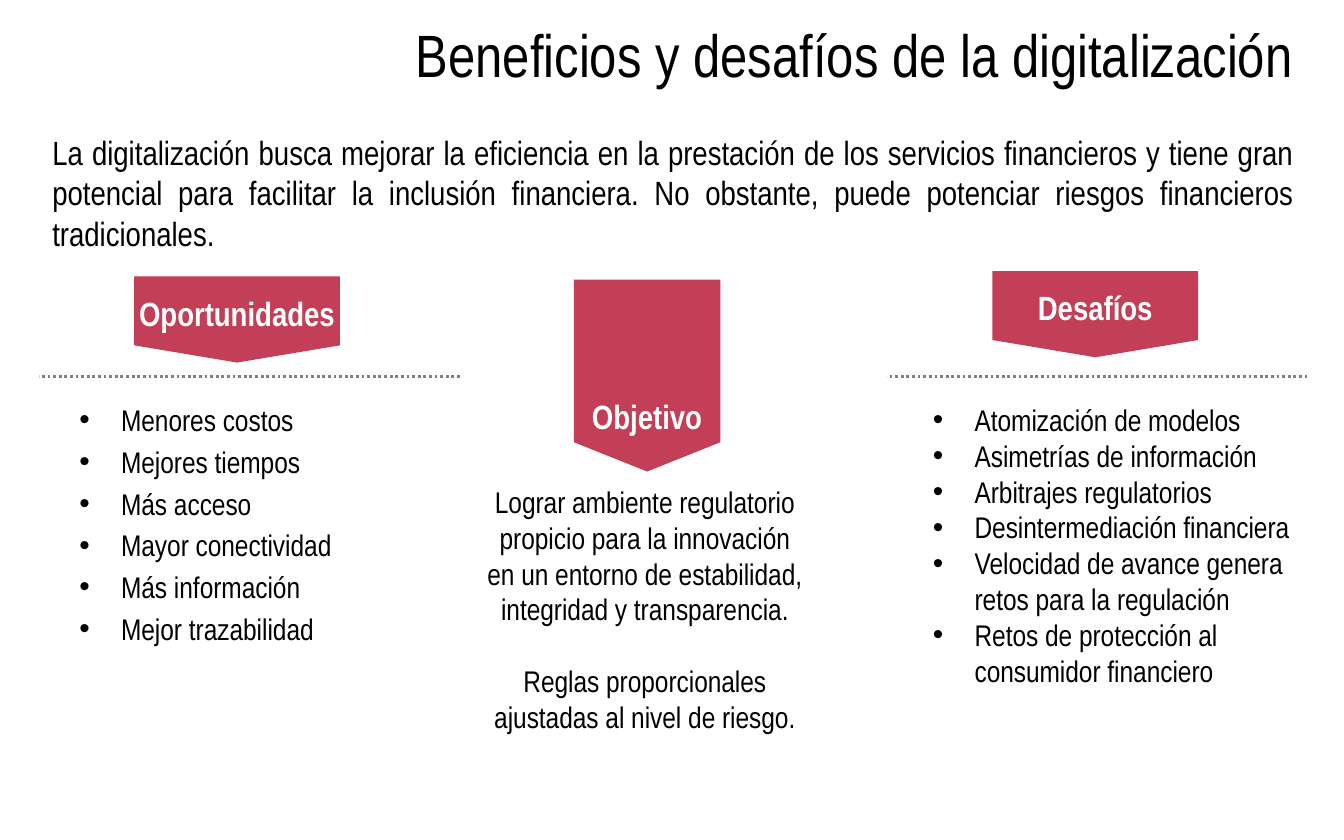
from lxml.etree import SubElement
from pptx import Presentation
from pptx.dml.color import RGBColor
from pptx.enum.dml import MSO_LINE
from pptx.enum.shapes import MSO_CONNECTOR, MSO_SHAPE
from pptx.enum.text import MSO_ANCHOR, PP_ALIGN
from pptx.oxml.ns import qn
from pptx.util import Cm, Pt

BLACK = RGBColor(0x00, 0x00, 0x00)
WHITE = RGBColor(0xFF, 0xFF, 0xFF)
CRIMSON = RGBColor(0xC3, 0x3E, 0x57)
GRAY = RGBColor(0x80, 0x80, 0x80)

FONT = "Arial Narrow"
BULLET_INDENT = Cm(0.79)
LABEL_HEIGHT = 1.02
RULE_TOP = 7.12
RULE_LENGTH = 7.95

TITLE = {"size": Pt(32)}
INTRO = {"size": Pt(18)}
BODY = {"size": Pt(16)}
LABEL = {"size": Pt(18), "bold": True}

OPPORTUNITIES = [
    "Menores costos",
    "Mejores tiempos",
    "Más acceso",
    "Mayor conectividad",
    "Más información",
    "Mejor trazabilidad",
]
CHALLENGES = [
    "Atomización de modelos",
    "Asimetrías de información",
    "Arbitrajes regulatorios",
    "Desintermediación financiera",
    "Velocidad de avance genera retos para la regulación",
    "Retos de protección al consumidor financiero",
]
GOALS = [
    "Lograr ambiente regulatorio propicio para la innovación en un entorno "
    "de estabilidad, integridad y transparencia.",
    "Reglas proporcionales ajustadas al nivel de riesgo.",
]
INTRODUCTION = (
    "La digitalización busca mejorar la eficiencia en la prestación de los "
    "servicios financieros y tiene gran potencial para facilitar la inclusión "
    "financiera. No obstante, puede potenciar riesgos financieros tradicionales."
)

PENNANTS = [
    ("Oportunidades", 4.48, 6.04, 3.89, 1.63, 5.41, 4.4),
    ("Objetivo", 12.23, 7.1, 2.77, 3.63, 7.37, 2.7),
    ("Desafíos", 20.7, 5.94, 3.89, 1.63, 5.3, 2.8),
]


def add_bullet(paragraph):
    properties = paragraph._p.get_or_add_pPr()
    properties.set("marL", str(BULLET_INDENT))
    properties.set("indent", str(-BULLET_INDENT))
    SubElement(properties, qn("a:buFont"), typeface="Arial")
    SubElement(properties, qn("a:buChar"), char="•")


def add_text(page, place, lines, style, align, color=BLACK, gap=0,
             bullets=False, wrap=True, anchor=MSO_ANCHOR.TOP):
    box = page.shapes.add_textbox(*map(Cm, place))
    frame = box.text_frame
    frame.word_wrap = wrap
    frame.vertical_anchor = anchor
    for index, line in enumerate(lines):
        paragraph = frame.paragraphs[0] if index == 0 else frame.add_paragraph()
        paragraph.alignment = align
        paragraph.space_before = Pt(gap if index else 0)
        if bullets:
            add_bullet(paragraph)
        span = paragraph.add_run()
        span.text = line
        for name, value in {"name": FONT, **style}.items():
            setattr(span.font, name, value)
        span.font.color.rgb = color


def add_pennant(page, label, center, middle, width, height, label_top, label_width):
    pennant = page.shapes.add_shape(
        MSO_SHAPE.PENTAGON, Cm(center - height / 2), Cm(middle - width / 2),
        Cm(height), Cm(width))
    pennant.rotation = 90
    pennant.adjustments[0] = 0.2
    pennant.shadow.inherit = False
    pennant.fill.solid()
    pennant.fill.fore_color.rgb = CRIMSON
    pennant.line.fill.background()
    add_text(page, (center - label_width / 2, label_top, label_width, LABEL_HEIGHT),
             [label], LABEL, PP_ALIGN.CENTER, color=WHITE, wrap=False)


def add_dotted_rule(page, left):
    rule = page.shapes.add_connector(
        MSO_CONNECTOR.STRAIGHT, Cm(left + RULE_LENGTH), Cm(RULE_TOP),
        Cm(left), Cm(RULE_TOP))
    rule.line.color.rgb = GRAY
    for name, value in {"width": Pt(1.5), "dash_style": MSO_LINE.ROUND_DOT}.items():
        setattr(rule.line, name, value)
    SubElement(rule._element.spPr, qn("a:effectLst"))


def main():
    deck = Presentation()
    deck.slide_width, deck.slide_height = Cm(25.4), Cm(15.88)
    page = deck.slides.add_slide(deck.slide_layouts[6])

    add_text(page, (6.67, 0.1, 18.03, 1.83),
             ["Beneficios y desafíos de la digitalización"], TITLE,
             PP_ALIGN.RIGHT, anchor=MSO_ANCHOR.MIDDLE)
    add_text(page, (0.74, 2.37, 23.98, 2.57), [INTRODUCTION], INTRO,
             PP_ALIGN.JUSTIFY)
    add_text(page, (1.25, 7.47, 6.93, 5.23), OPPORTUNITIES, BODY,
             PP_ALIGN.JUSTIFY, gap=3.2, bullets=True)
    add_text(page, (8.94, 9.02, 6.5, 5.05), GOALS, BODY,
             PP_ALIGN.CENTER, gap=19)
    add_text(page, (17.38, 7.47, 7.37, 5.74), CHALLENGES, BODY,
             PP_ALIGN.LEFT, bullets=True)
    for pennant in PENNANTS:
        add_pennant(page, *pennant)
    for left in (0.74, 16.76):
        add_dotted_rule(page, left)

    deck.save("out.pptx")


if __name__ == "__main__":
    main()
